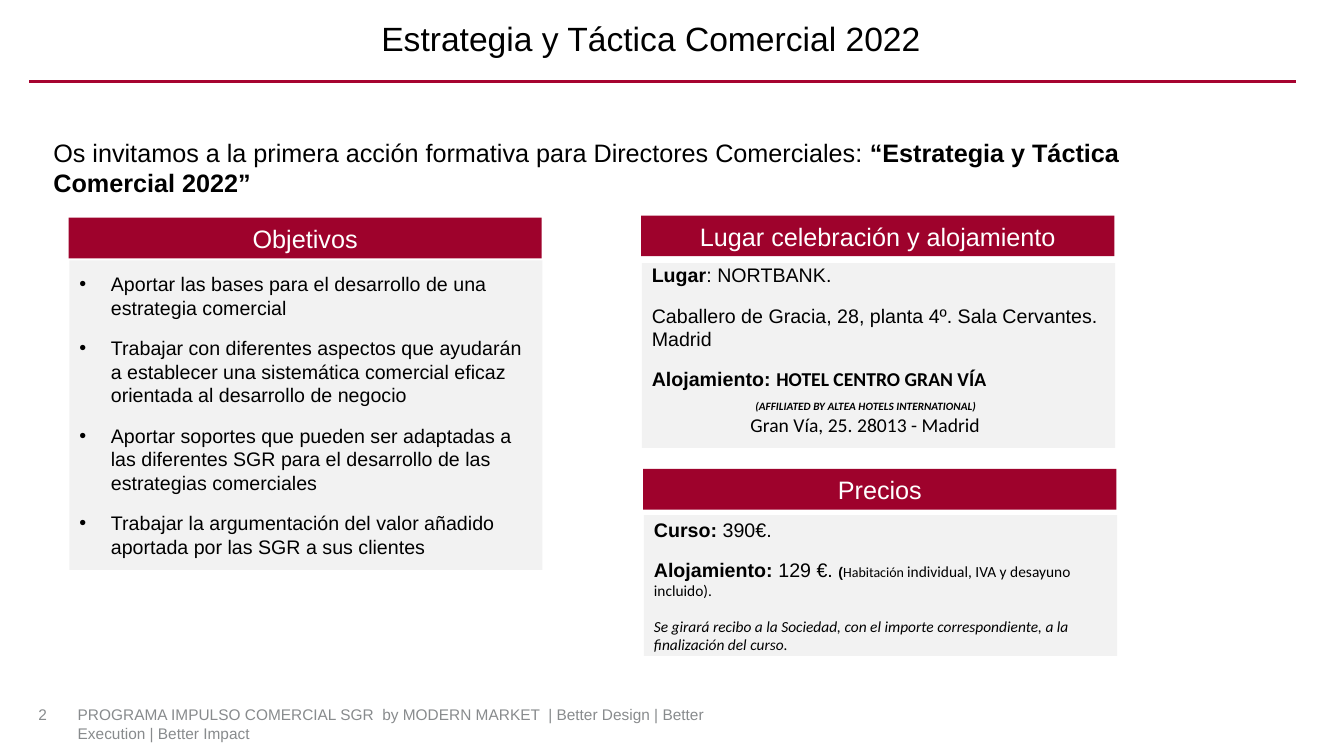
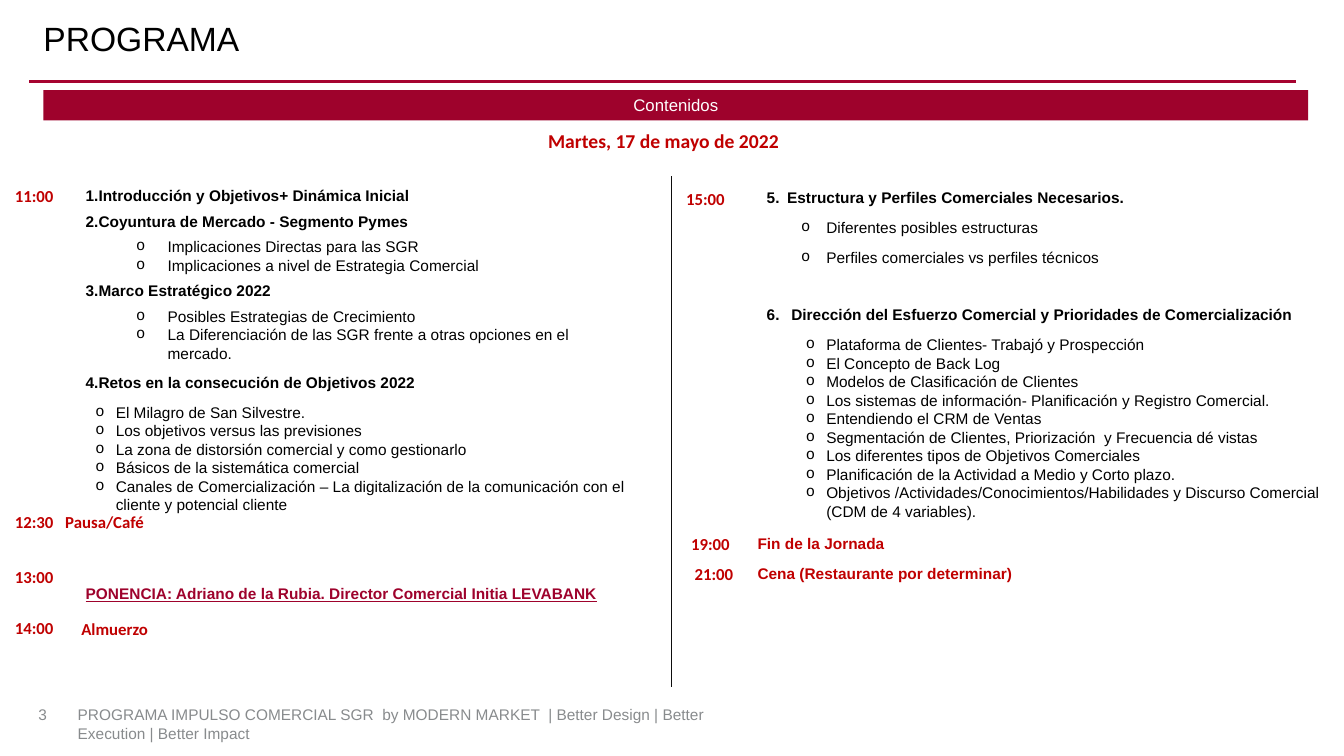
from dataclasses import dataclass

from lxml.etree import SubElement
from pptx import Presentation
from pptx.dml.color import RGBColor
from pptx.enum.shapes import MSO_CONNECTOR, MSO_SHAPE
from pptx.enum.text import MSO_ANCHOR, MSO_AUTO_SIZE, PP_ALIGN
from pptx.oxml.ns import qn
from pptx.util import Pt


@dataclass(frozen=True)
class Theme:
    sans: str = "Arial"
    accent_font: str = "Calibri"
    bullet_font: str = "Courier New"
    black: str = "000000"
    white: str = "FFFFFF"
    crimson: str = "9E022C"
    rule: str = "A60330"
    red: str = "C00000"
    panel: str = "F2F2F2"
    gray: str = "888B8D"
    divider: str = "0D0D0D"
    title: int = 24
    heading: int = 18
    body: int = 14
    label: int = 12
    small: int = 11
    note: int = 10
    tiny: int = 8


THEME = Theme()


@dataclass(frozen=True)
class Box:
    left: float
    top: float
    width: float
    height: float

    def lengths(self):
        return Pt(self.left), Pt(self.top), Pt(self.width), Pt(self.height)


@dataclass(frozen=True)
class Words:
    text: str
    size: int = THEME.body
    bold: bool = False
    italic: bool = False
    underline: bool = False
    font: str = THEME.sans
    color: str = THEME.black


@dataclass(frozen=True)
class Line:
    words: tuple
    level: int = 0
    margin: float = 0
    indent: float = 0
    before: float = 0
    after: float = 0
    bullet: str = ""
    start: int = 0
    tab: float = 0
    align: PP_ALIGN = PP_ALIGN.LEFT
    spacing: float = 1.0


def color(value):
    return RGBColor.from_string(value)


def format_bullet(paragraph, line):
    properties = paragraph._p.get_or_add_pPr()
    properties.set("marL", str(Pt(line.margin)))
    properties.set("indent", str(Pt(line.indent)))
    if line.start:
        SubElement(properties, qn("a:buFont"), typeface=THEME.sans)
        SubElement(properties, qn("a:buAutoNum"), type="arabicPeriod", startAt=str(line.start))
    elif line.bullet:
        typeface = THEME.bullet_font if line.bullet == "o" else THEME.sans
        SubElement(properties, qn("a:buFont"), typeface=typeface)
        SubElement(properties, qn("a:buChar"), char=line.bullet)
    else:
        SubElement(properties, qn("a:buNone"))
    if line.tab:
        tabs = SubElement(properties, qn("a:tabLst"))
        SubElement(tabs, qn("a:tab"), pos=str(Pt(line.tab)), algn="l")


def write(shape, lines, anchor=MSO_ANCHOR.TOP, insets=(7.2, 3.6, 7.2, 3.6)):
    frame = shape.text_frame
    frame.word_wrap = True
    frame.auto_size = MSO_AUTO_SIZE.NONE
    frame.vertical_anchor = anchor
    (frame.margin_left, frame.margin_top,
     frame.margin_right, frame.margin_bottom) = map(Pt, insets)
    for index, line in enumerate(lines):
        paragraph = frame.add_paragraph() if index else frame.paragraphs[0]
        paragraph.alignment = line.align
        paragraph.level = line.level
        paragraph.line_spacing = line.spacing
        paragraph.space_before = Pt(line.before)
        paragraph.space_after = Pt(line.after)
        format_bullet(paragraph, line)
        for words in line.words:
            run = paragraph.add_run()
            run.text = words.text
            run.font.name = words.font
            run.font.size = Pt(words.size)
            run.font.bold = words.bold
            run.font.italic = words.italic
            run.font.underline = words.underline
            run.font.color.rgb = color(words.color)


def place(shape, box):
    shape.left, shape.top, shape.width, shape.height = box.lengths()
    return shape


def add_text(slide, box, *lines, **options):
    shape = slide.shapes.add_textbox(*box.lengths())
    write(shape, lines, **options)
    return shape


def add_block(slide, box, fill):
    shape = slide.shapes.add_shape(MSO_SHAPE.RECTANGLE, *box.lengths())
    shape.shadow.inherit = False
    shape.fill.solid()
    shape.fill.fore_color.rgb = color(fill)
    shape.line.fill.background()
    return shape


def add_line(slide, start, end, line_color, width):
    points = [Pt(value) for value in (*start, *end)]
    connector = slide.shapes.add_connector(MSO_CONNECTOR.STRAIGHT, *points)
    connector.line.color.rgb = color(line_color)
    connector.line.width = Pt(width)
    SubElement(connector.element.spPr, qn("a:effectLst"))
    return connector


def add_bar(slide, box, text, size=THEME.heading):
    words = Words(text, size, color=THEME.white)
    write(add_block(slide, box, THEME.crimson),
          [Line((words,), align=PP_ALIGN.CENTER)], anchor=MSO_ANCHOR.MIDDLE)


def add_section(slide, box, heading, gap):
    bar_height = 29
    add_bar(slide, Box(box.left, box.top, box.width, bar_height), heading)
    offset = bar_height + gap
    return Box(box.left + 0.5, box.top + offset, box.width, box.height - offset)


def dress_master(presentation, slide):
    footer = Words("PROGRAMA IMPULSO COMERCIAL SGR  by MODERN MARKET  | Better Design | "
                   "Better Execution | Better Impact", THEME.small, color=THEME.gray)
    tree = presentation.slide_master.element.cSld.spTree
    tree.append(add_line(slide, (21, 58.5), (926, 58.5), THEME.rule, 2.25).element)
    tree.append(add_text(slide, Box(55.5, 504, 469.5, 28), Line((footer,)),
                         insets=(0, 0, 0, 0)).element)


def start_slide(slide, title, number, width, align):
    write(place(slide.shapes.title, Box(31, 10.5, width, 37.5)),
          [Line((Words(title, THEME.title),), align=align, spacing=0.9)],
          anchor=MSO_ANCHOR.MIDDLE, insets=(0, 3.6, 7.2, 3.6))
    add_text(slide, Box(27.5, 492, 32, 25),
             Line((Words(number, THEME.small, color=THEME.gray),), spacing=0.85),
             anchor=MSO_ANCHOR.BOTTOM, insets=(0, 0, 0, 0))


def objectives(slide, box):
    goals = (
        "Aportar las bases para el desarrollo de una estrategia comercial",
        "Trabajar con diferentes aspectos que ayudarán a establecer una sistemática "
        "comercial eficaz orientada al desarrollo de negocio",
        "Aportar soportes que pueden ser adaptadas a las diferentes SGR para el "
        "desarrollo de las estrategias comerciales",
        "Trabajar la argumentación del valor añadido aportada por las SGR a sus clientes",
    )
    body = place(slide.placeholders[1], add_section(slide, box, "Objetivos", 1.5))
    body.fill.solid()
    body.fill.fore_color.rgb = color(THEME.panel)
    write(body, [Line((Words(goal),), margin=22.5, indent=-22.5, after=12, bullet="•")
                 for goal in goals], anchor=MSO_ANCHOR.MIDDLE)


def venue(slide, box):
    calibri = THEME.accent_font
    body = add_section(slide, box, "Lugar celebración y alojamiento", 5)
    write(add_block(slide, body, THEME.panel), [
        Line((Words("Lugar", bold=True), Words(": NORTBANK.")), after=12),
        Line((Words("Caballero de Gracia, 28, planta 4º. Sala Cervantes. Madrid"),), after=12),
        Line((Words("Alojamiento: ", bold=True),
              Words("HOTEL CENTRO GRAN VÍA", bold=True, font=calibri))),
        Line((Words("(AFFILIATED BY ALTEA HOTELS INTERNATIONAL)", THEME.tiny, bold=True,
                    italic=True, font=calibri),), margin=74, before=6),
        Line((Words("Gran Vía, 25. 28013 - Madrid", font=calibri),), margin=70.5),
    ], insets=(7.2, 0, 7.2, 0))


def prices(slide, box):
    calibri = THEME.accent_font
    body = add_section(slide, box, "Precios", 4)
    write(add_block(slide, body, THEME.panel), [
        Line((Words("Curso: ", bold=True), Words("390€.")), after=12),
        Line((Words("Alojamiento: ", bold=True), Words("129 €. "),
              Words("(", THEME.note, bold=True),
              Words("Habitación ", THEME.note, font=calibri),
              Words("individual, IVA y desayuno incluido).", THEME.small, font=calibri)),
             after=12),
        Line((Words("Se girará recibo a la Sociedad, con el importe correspondiente, a la "
                    "finalización del curso.", THEME.small, italic=True, font=calibri),),
             after=12),
    ], anchor=MSO_ANCHOR.MIDDLE)


def invitation_slide(slide):
    start_slide(slide, "Estrategia y Táctica Comercial 2022", "2", 875, PP_ALIGN.CENTER)
    add_text(slide, Box(31, 94.5, 815, 50), Line((
        Words("Os invitamos a la primera acción formativa para Directores Comerciales: ",
              THEME.heading),
        Words("“Estrategia y Táctica Comercial 2022”", THEME.heading, bold=True))))
    objectives(slide, Box(49, 155.5, 338, 251.5))
    venue(slide, Box(458, 154, 338, 166))
    prices(slide, Box(459.5, 335, 338, 133.5))


def topic(text, start, after, margin, indent, **options):
    return Line((Words(text, THEME.small, bold=True),), start=start, after=after,
                margin=margin, indent=indent, **options)


def points(texts, margin, indent, last_after, after=0):
    last = len(texts) - 1
    return [Line((Words(text, THEME.small),), level=1, margin=margin, indent=indent,
                 bullet="o", after=last_after if index == last else after)
            for index, text in enumerate(texts)]


def morning(shape, box):
    topic_place = {"margin": 6.5, "indent": -6.5, "tab": 14.5}
    speaker = Words("PONENCIA: Adriano de la Rubia. Director Comercial Initia LEVABANK",
                    THEME.small, bold=True, underline=True, color=THEME.crimson)
    write(place(shape, box), [
        topic("Introducción y Objetivos+ Dinámica Inicial", 1, 5, **topic_place),
        topic("Coyuntura de Mercado - Segmento Pymes", 1, 5, **topic_place),
        *points(("Implicaciones Directas para las SGR",
                 "Implicaciones a nivel de Estrategia Comercial"), 58.5, -22.5, 5),
        topic("Marco Estratégico 2022", 1, 5, **topic_place),
        *points(("Posibles Estrategias de Crecimiento",
                 "La Diferenciación de las SGR frente a otras opciones en el mercado."),
                58.5, -22.5, 8),
        topic("Retos en la consecución de Objetivos 2022", 1, 8, **topic_place),
        *points(("El Milagro de San Silvestre.",
                 "Los objetivos versus las previsiones",
                 "La zona de distorsión comercial y como gestionarlo",
                 "Básicos de la sistemática comercial",
                 "Canales de Comercialización – La digitalización de la comunicación "
                 "con el cliente y potencial cliente"), 21.5, -14.5, 8),
        Line((speaker,), before=42),
    ])


def afternoon(shape, box):
    topic_place = {"margin": 42.5, "indent": -14.5}
    write(place(shape, box), [
        topic("Estructura y Perfiles Comerciales Necesarios.", 5, 8, **topic_place),
        *points(("Diferentes posibles estructuras",
                 "Perfiles comerciales vs perfiles técnicos"), 70.5, -18, 8, after=8),
        topic(" Dirección del Esfuerzo Comercial y Prioridades de Comercialización",
              5, 8, before=20, tab=42.5, **topic_place),
        *points(("Plataforma de Clientes- Trabajó y Prospección",
                 "El Concepto de Back Log",
                 "Modelos de Clasificación de Clientes",
                 "Los sistemas de información- Planificación y Registro Comercial.",
                 "Entendiendo el CRM de Ventas",
                 "Segmentación de Clientes, Priorización  y Frecuencia dé vistas",
                 "Los diferentes tipos de Objetivos Comerciales",
                 "Planificación de la Actividad a Medio y Corto plazo.",
                 "Objetivos /Actividades/Conocimientos/Habilidades y Discurso Comercial "
                 "(CDM de 4 variables)."), 70.5, -14.5, 8),
    ])


def add_label(slide, box, text, size=THEME.label, **options):
    words = Words(text, size, bold=True, font=THEME.accent_font, color=THEME.red)
    add_text(slide, box, Line((words,), **options))


def program_slide(slide):
    start_slide(slide, "PROGRAMA", "3", 838, PP_ALIGN.LEFT)
    add_bar(slide, Box(31, 64.5, 903.5, 21.5), "Contenidos", THEME.label)
    add_label(slide, Box(280, 88.5, 388, 24.5), "Martes, 17 de mayo de 2022", THEME.body,
              align=PP_ALIGN.CENTER)
    morning(slide.placeholders[1], Box(54, 129.5, 403, 294.5))
    afternoon(slide.placeholders[2], Box(512.5, 131, 442, 245.5))
    add_line(slide, (479.5, 126), (479.5, 491), THEME.divider, 0.5)
    for text, left, top, width in (
        ("11:00", 3.5, 129.5, 51), ("12:30\tPausa/Café", 3.5, 362, 206),
        ("13:00", 3.5, 401, 51), ("14:00", 3.5, 438, 51), ("Almuerzo", 51, 438.5, 102),
        ("15:00", 483, 131, 51), ("19:00", 486.5, 378, 51), ("21:00", 489, 399, 51),
    ):
        add_label(slide, Box(left, top, width, 21.5), text, tab=36 if "\t" in text else 0)
    add_text(slide, Box(534, 378, 248.5, 42), *(
        Line((Words(text, THEME.small, bold=True, color=THEME.red),), after=8)
        for text in ("Fin de la Jornada", "Cena (Restaurante por determinar)")))


def main():
    presentation = Presentation()
    presentation.slide_width, presentation.slide_height = Pt(960), Pt(540)
    layouts = presentation.slide_layouts
    invitation = presentation.slides.add_slide(layouts[1])
    dress_master(presentation, invitation)
    invitation_slide(invitation)
    program_slide(presentation.slides.add_slide(layouts[3]))
    presentation.save("out.pptx")


if __name__ == "__main__":
    main()
